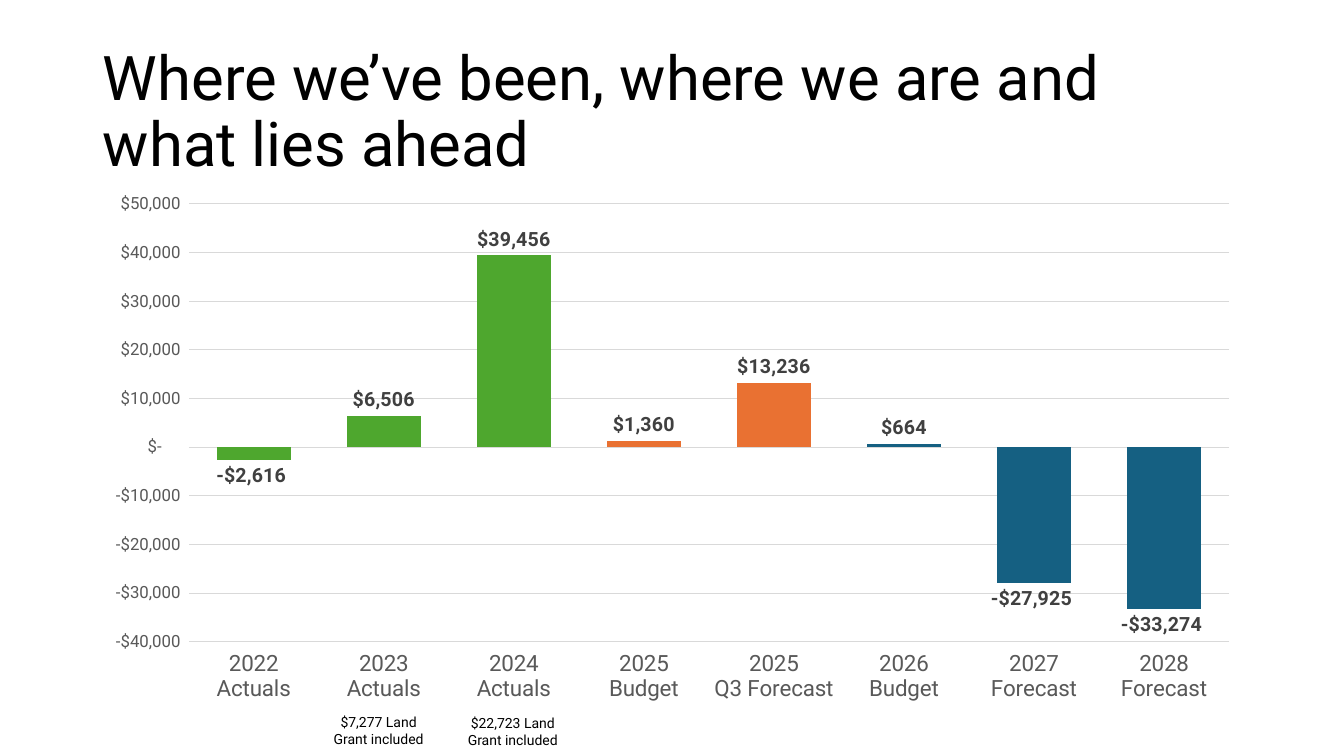
"""Build a one-slide summary of yearly results from 2022 to 2028."""
from dataclasses import dataclass

from pptx import Presentation
from pptx.chart.axis import CategoryAxis, ValueAxis
from pptx.chart.chart import Chart
from pptx.chart.data import CategoryChartData
from pptx.dml.color import RGBColor
from pptx.enum.chart import XL_CHART_TYPE, XL_LABEL_POSITION, XL_TICK_LABEL_POSITION, XL_TICK_MARK
from pptx.enum.text import MSO_ANCHOR, MSO_AUTO_SIZE, PP_ALIGN
from pptx.slide import Slide
from pptx.text.text import Font
from pptx.util import Inches, Pt

TYPEFACE = "Roboto"
BLACK = RGBColor(0x00, 0x00, 0x00)
LABEL_GREY = RGBColor(0x40, 0x40, 0x40)
AXIS_GREY = RGBColor(0x59, 0x59, 0x59)
GRID_GREY = RGBColor(0xD9, 0xD9, 0xD9)
ACTUAL_GREEN = RGBColor(0x4E, 0xA7, 0x2E)
CURRENT_ORANGE = RGBColor(0xE9, 0x71, 0x32)
FUTURE_BLUE = RGBColor(0x15, 0x60, 0x82)
DOLLARS = '_-"$"* #,##0_-;\\-"$"* #,##0_-;_-"$"* "-"??_-;_-@_-'


@dataclass(frozen=True)
class Result:
    period: str
    amount: int
    color: RGBColor


@dataclass(frozen=True)
class GrantNote:
    text: str
    left: float
    top: float


RESULTS = [
    Result("2022\nActuals", -2616, ACTUAL_GREEN),
    Result("2023\nActuals", 6506, ACTUAL_GREEN),
    Result("2024\nActuals", 39456, ACTUAL_GREEN),
    Result("2025\nBudget", 1360, CURRENT_ORANGE),
    Result("2025\nQ3 Forecast", 13236, CURRENT_ORANGE),
    Result("2026\nBudget", 664, FUTURE_BLUE),
    Result("2027\nForecast", -27925, FUTURE_BLUE),
    Result("2028\nForecast", -33274, FUTURE_BLUE),
]
GRANT_NOTES = [
    GrantNote("$7,277 Land Grant included", 3.16, 7.03),
    GrantNote("$22,723 Land Grant included", 4.49, 7.04),
]


def style_font(font: Font, size: float, color: RGBColor, bold: bool = False) -> None:
    font.name = TYPEFACE
    font.size = Pt(size)
    font.bold = bold
    font.color.rgb = color


def add_title(slide: Slide, text: str) -> None:
    title = slide.shapes.title
    title.left, title.top = Inches(0.92), Inches(0.4)
    title.width, title.height = Inches(11.5), Inches(1.45)
    frame = title.text_frame
    frame.word_wrap = True
    frame.auto_size = MSO_AUTO_SIZE.NONE
    frame.vertical_anchor = MSO_ANCHOR.MIDDLE
    paragraph = frame.paragraphs[0]
    paragraph.alignment = PP_ALIGN.LEFT
    paragraph.line_spacing = 0.9
    run = paragraph.add_run()
    run.text = text
    style_font(run.font, 44, BLACK)


def style_axis(axis: CategoryAxis | ValueAxis, size: float) -> None:
    axis.major_tick_mark = XL_TICK_MARK.NONE
    axis.minor_tick_mark = XL_TICK_MARK.NONE
    style_font(axis.tick_labels.font, size, AXIS_GREY)


def style_axes(chart: Chart) -> None:
    periods = chart.category_axis
    style_axis(periods, 16)
    periods.tick_label_position = XL_TICK_LABEL_POSITION.LOW
    periods.format.line.color.rgb = GRID_GREY
    periods.format.line.width = Pt(0.75)

    amounts = chart.value_axis
    style_axis(amounts, 12)
    amounts.minimum_scale, amounts.maximum_scale = -40000, 50000
    amounts.major_unit = 10000
    amounts.format.line.fill.background()
    amounts.tick_labels.number_format = DOLLARS
    amounts.tick_labels.number_format_is_linked = False
    amounts.has_major_gridlines = True
    gridline = amounts.major_gridlines.format.line
    gridline.color.rgb = GRID_GREY
    gridline.width = Pt(0.75)


def style_columns(chart: Chart) -> None:
    plot = chart.plots[0]
    plot.vary_by_categories = False
    plot.gap_width = 75
    plot.overlap = -25
    series = plot.series[0]
    series.invert_if_negative = False
    series.format.fill.solid()
    series.format.fill.fore_color.rgb = FUTURE_BLUE
    for index, result in enumerate(RESULTS):
        if result.color != FUTURE_BLUE:
            fill = series.points[index].format.fill
            fill.solid()
            fill.fore_color.rgb = result.color

    labels = series.data_labels
    labels.show_value = True
    labels.position = XL_LABEL_POSITION.OUTSIDE_END
    labels.number_format = DOLLARS
    labels.number_format_is_linked = False
    style_font(labels.font, 14, LABEL_GREY, bold=True)


def add_results_chart(slide: Slide) -> None:
    data = CategoryChartData(number_format=DOLLARS)
    data.categories = [result.period for result in RESULTS]
    data.add_series("Series 1", [result.amount for result in RESULTS])
    chart = slide.shapes.add_chart(
        XL_CHART_TYPE.COLUMN_CLUSTERED,
        Inches(0.92), Inches(1.82), Inches(11.5), Inches(5.25), data,
    ).chart
    chart.has_title = False
    chart.has_legend = False
    style_font(chart.font, 10, BLACK)
    style_axes(chart)
    style_columns(chart)


def add_grant_note(slide: Slide, note: GrantNote) -> None:
    frame = slide.shapes.add_textbox(
        Inches(note.left), Inches(note.top), Inches(1.19), Inches(0.44)
    ).text_frame
    frame.word_wrap = True
    frame.auto_size = MSO_AUTO_SIZE.SHAPE_TO_FIT_TEXT
    paragraph = frame.paragraphs[0]
    paragraph.alignment = PP_ALIGN.CENTER
    paragraph.space_after = Pt(6)
    run = paragraph.add_run()
    run.text = note.text
    style_font(run.font, 10, BLACK)


def main() -> None:
    presentation = Presentation()
    presentation.slide_width = Inches(13.33)
    presentation.slide_height = Inches(7.5)
    slide = presentation.slides.add_slide(presentation.slide_layouts[5])
    add_title(slide, "Where we’ve been, where we are and what lies ahead")
    add_results_chart(slide)
    for note in GRANT_NOTES:
        add_grant_note(slide, note)
    presentation.save("out.pptx")


if __name__ == "__main__":
    main()
